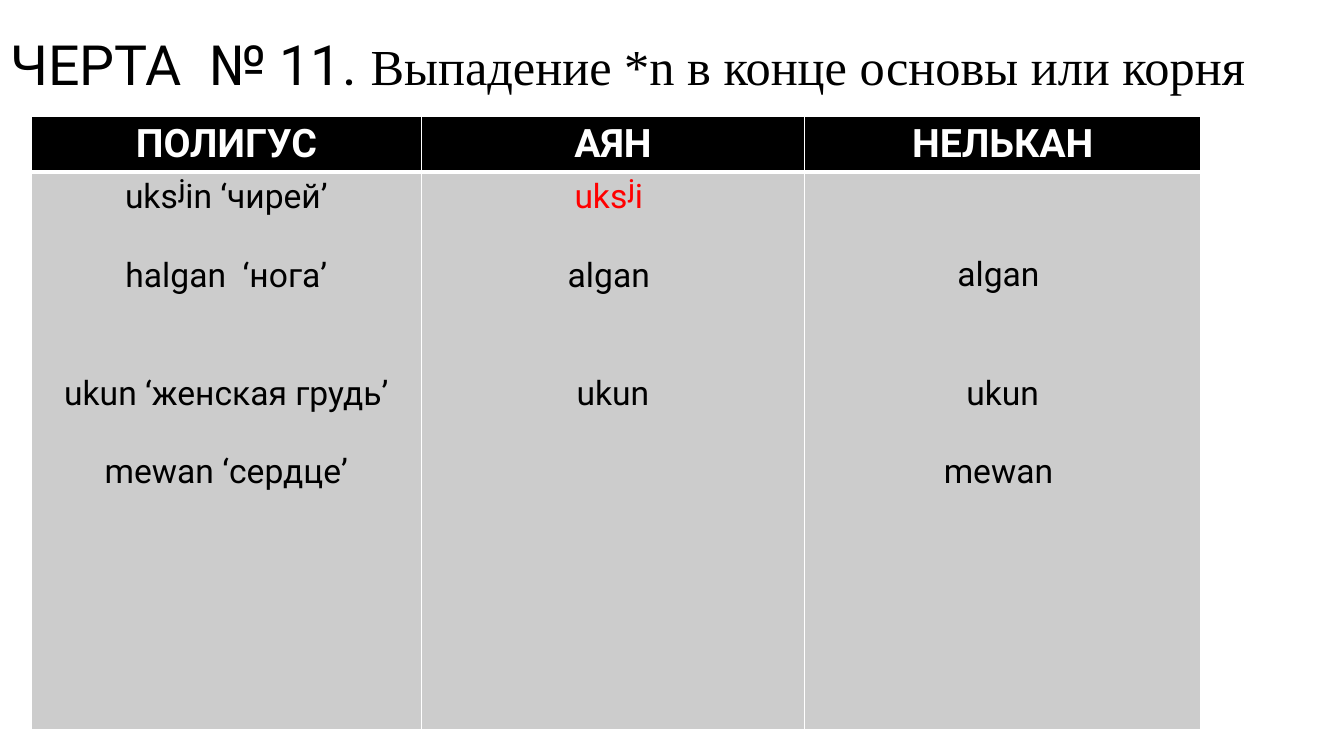
import pptx
import pptx.util
import pptx.dml.color
import pptx.enum.text
import pptx.oxml
import pptx.oxml.ns

Inches = pptx.util.Inches
Pt = pptx.util.Pt
PP_ALIGN = pptx.enum.text.PP_ALIGN

LINE = 28.1
COLUMN_WIDTHS = [3.87, 3.8, 3.93]
ROW_HEIGHTS = [0.54, 5.53]
HEADER_FORMAT = {"name": "Roboto", "size": Pt(28), "bold": True}
WORD_FORMAT = {"name": "Roboto", "size": Pt(24), "bold": False}
HEADER_BORDERS = {"L": 1, "R": 1, "T": 1, "B": 3}
BODY_BORDERS = {"L": 1, "R": 1, "T": 1, "B": 1}

# Each word: blank lines above it, text, colour
DIALECTS = {
    "ПОЛИГУС": [
        (0, "uksʲin ‘чирей’", "000000"),
        (1, "halgan  ‘нога’", "000000"),
        (2, "ukun ‘женская грудь’", "000000"),
        (1, " mewan ‘сердце’ ", "000000"),
    ],
    "АЯН": [
        (0, "uksʲi ", "FF0000"),
        (1, "algan ", "000000"),
        (2, "ukun", "000000"),
    ],
    "НЕЛЬКАН": [
        (2, "algan ", "000000"),
        (2, "ukun", "000000"),
        (1, "mewan ", "000000"),
    ],
}


def rgb(value):
    return pptx.dml.color.RGBColor.from_string(value)


def apply_format(target, values):
    for name, value in values.items():
        setattr(target, name, value)


def add_run(paragraph, text, color, values):
    run = paragraph.add_run()
    run.text = text
    apply_format(run.font, values)
    run.font.color.rgb = rgb(color)


def style_cell(cell, fill, borders):
    cell.fill.solid()
    cell.fill.fore_color.rgb = rgb(fill)
    properties = cell._tc.get_or_add_tcPr()
    for index, (side, width) in enumerate(borders.items()):
        border = pptx.oxml.parse_xml(
            f'<a:ln{side} {pptx.oxml.ns.nsdecls("a")} w="{Pt(width)}">'
            f'<a:solidFill><a:srgbClr val="FFFFFF"/></a:solidFill></a:ln{side}>'
        )
        properties.insert(index, border)


def fill_header(cell, dialect):
    style_cell(cell, "000000", HEADER_BORDERS)
    heading = cell.text_frame.paragraphs[0]
    heading.alignment = PP_ALIGN.CENTER
    add_run(heading, dialect, "FFFFFF", HEADER_FORMAT)


def fill_words(cell, words):
    style_cell(cell, "CCCCCC", BODY_BORDERS)
    frame = cell.text_frame
    for index, (gap, text, color) in enumerate(words):
        if index == 0:
            paragraph = frame.paragraphs[0]
            cell.margin_top = Inches(0.05) + Pt(gap * LINE)
        else:
            paragraph = frame.add_paragraph()
            paragraph.space_before = Pt(gap * LINE)
        paragraph.alignment = PP_ALIGN.CENTER
        add_run(paragraph, text, color, WORD_FORMAT)


def fill_title(slide):
    title = slide.shapes.title
    apply_format(title, {
        "left": Inches(0), "top": Inches(0),
        "width": Inches(13.33), "height": Inches(1.34),
    })
    apply_format(title.text_frame, {
        "word_wrap": True,
        "auto_size": pptx.enum.text.MSO_AUTO_SIZE.NONE,
        "vertical_anchor": pptx.enum.text.MSO_ANCHOR.MIDDLE,
    })
    heading = title.text_frame.paragraphs[0]
    apply_format(heading, {"alignment": PP_ALIGN.LEFT, "line_spacing": 0.9})
    add_run(heading, "ЧЕРТА  № 11. ", "000000", {"name": "Roboto", "size": Pt(39.6)})
    add_run(heading, "Выпадение *n в конце основы или корня", "000000",
            {"name": "Times New Roman", "size": Pt(36)})


def add_dialect_table(slide):
    table = slide.shapes.add_table(
        len(ROW_HEIGHTS), len(DIALECTS), Inches(0.31), Inches(1.15),
        Inches(sum(COLUMN_WIDTHS)), Inches(sum(ROW_HEIGHTS)),
    ).table
    for row, height in zip(table.rows, ROW_HEIGHTS):
        row.height = Inches(height)
    for column, width in zip(table.columns, COLUMN_WIDTHS):
        column.width = Inches(width)
    for index, (dialect, words) in enumerate(DIALECTS.items()):
        fill_header(table.cell(0, index), dialect)
        fill_words(table.cell(1, index), words)


def main():
    presentation = pptx.Presentation()
    presentation.slide_width = Inches(13.33)
    presentation.slide_height = Inches(7.5)
    slide = presentation.slides.add_slide(presentation.slide_layouts[5])
    fill_title(slide)
    add_dialect_table(slide)
    presentation.save("out.pptx")


if __name__ == "__main__":
    main()
